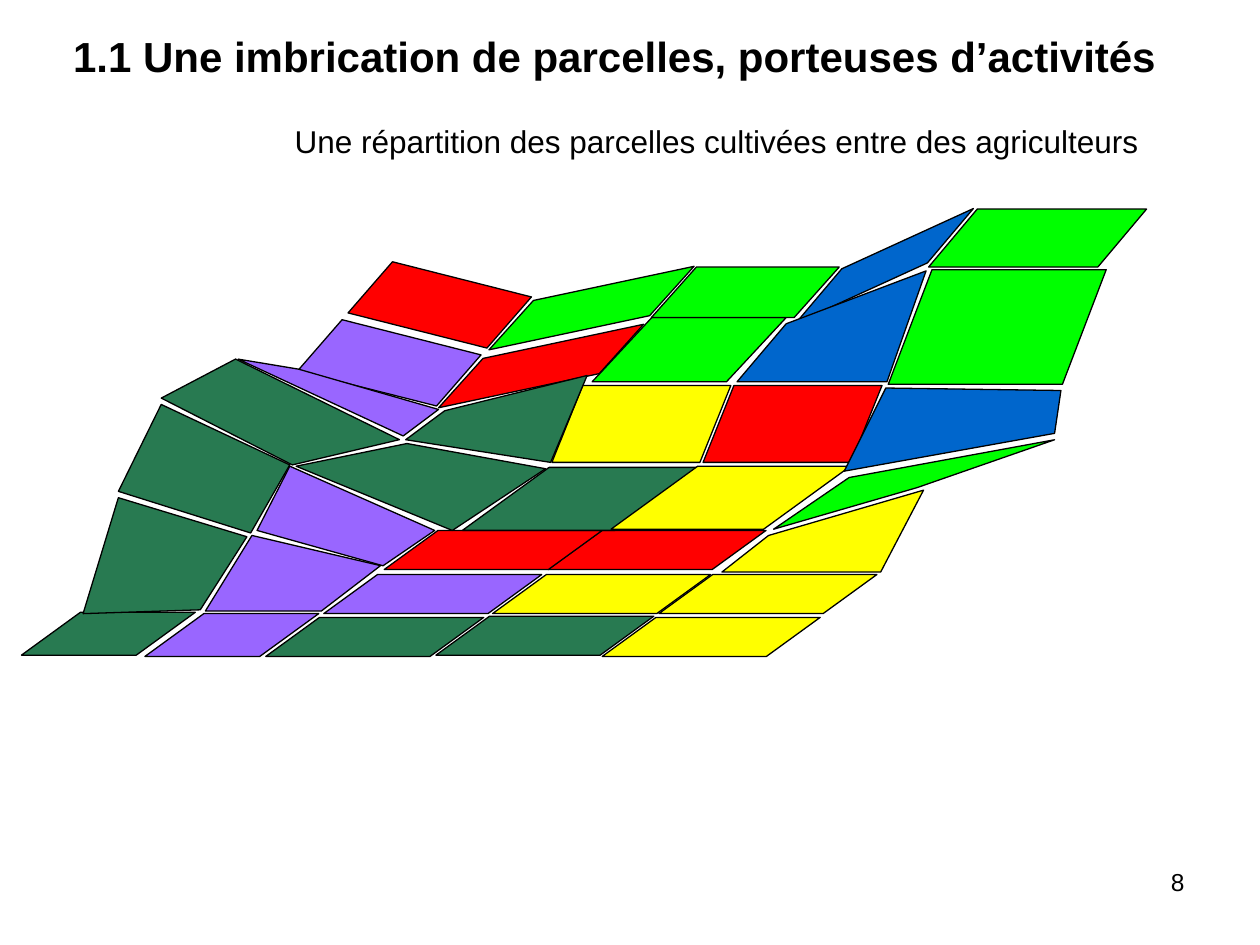
import pptx
import pptx.util
import pptx.dml.color
import pptx.enum.shapes
import pptx.enum.text

PX = 9144
COLORS = {
    "black": "000000",
    "lime": "00FF00",
    "yellow": "FFFF00",
    "red": "FF0000",
    "blue": "0066CC",
    "violet": "9966FF",
    "forest": "287A51",
}

STRIP = (173, 31, 1.377)
TILTED = (138, 48, 0.506)
WIDE = (190, 50, 1.377)
SQUARE = (142, 61, 0.402)
SMALL = (138, 34, 1.377)

PARALLELOGRAMS = [
    ("lime", 470, 252, (154, 51, 0.929), 0),
    ("yellow", 523, 456, STRIP, 0),
    ("forest", 211, 490, STRIP, 0),
    ("forest", 346, 489, STRIP, 0),
    ("yellow", 478, 490, STRIP, 0),
    ("lime", 517, 212, (149, 40, 0.892), 0),
    ("blue", 619, 199, (166, 24, 2.13), 155.4),
    ("lime", 737, 166, (173, 46, 0.84), 0),
    ("yellow", 438, 306, SQUARE, 0),
    ("red", 280, 218, TILTED, 14.2),
    ("lime", 383, 229, STRIP, 348),
    ("red", 343, 275, STRIP, 348),
    ("red", 435, 421, STRIP, 0),
    ("violet", 257, 456, STRIP, 0),
    ("red", 305, 421, STRIP, 0),
    ("yellow", 391, 456, STRIP, 0),
    ("lime", 705, 214, (173, 91, 0.382), 0),
    ("violet", 115, 487, SMALL, 0),
    ("violet", 240, 264, TILTED, 14.2),
    ("forest", 367, 371, WIDE, 0),
    ("yellow", 485, 370, WIDE, 0),
    ("red", 558, 306, SQUARE, 0),
    ("forest", 17, 486, SMALL, 0),
]

POLYGONS = [
    ("blue", [(624, 257), (585, 303), (704, 303), (735, 215)]),
    ("blue", [(703, 308), (670, 374), (837, 344), (842, 310)]),
    ("violet", [(237, 293), (189, 285), (320, 346), (348, 325)]),
    ("forest", [(466, 298), (437, 367), (322, 349), (353, 326)]),
    ("forest", [(66, 487), (94, 395), (196, 426), (159, 484)]),
    ("violet", [(302, 449), (200, 425), (163, 485), (255, 485)]),
    ("forest", [(94, 390), (128, 321), (230, 369), (199, 423)]),
    ("forest", [(128, 316), (187, 285), (317, 349), (232, 369)]),
    ("forest", [(235, 370), (323, 352), (433, 372), (359, 421)]),
    ("violet", [(230, 370), (204, 421), (304, 449), (345, 421)]),
    ("lime", [(614, 420), (674, 379), (837, 349), (728, 387)]),
    ("yellow", [(573, 454), (699, 454), (733, 389), (610, 425)]),
]


class SlideBuilder:
    font = "Arial"
    line_width = 0.75

    def __init__(self, slide):
        self.s = slide
        self.parcels = slide.shapes.add_group_shape().shapes

    def color(self, name):
        return pptx.dml.color.RGBColor.from_string(COLORS[name])

    def set_text(self, sp, text, size, bold=False, align=pptx.enum.text.PP_ALIGN.LEFT):
        tf = sp.text_frame
        tf.word_wrap = True
        tf.auto_size = pptx.enum.text.MSO_AUTO_SIZE.NONE
        tf.vertical_anchor = pptx.enum.text.MSO_ANCHOR.TOP
        p = tf.paragraphs[0]
        p.text = text
        p.alignment = align
        p.font.name = self.font
        p.font.size = pptx.util.Pt(size)
        p.font.bold = bold
        p.font.color.rgb = self.color("black")

    def title(self, text, x, y, w, h, size):
        sp = self.s.shapes.title
        sp.left, sp.top, sp.width, sp.height = (v * PX for v in (x, y, w, h))
        self.set_text(sp, text, size, bold=True)

    def text(self, text, x, y, w, h, size, align=pptx.enum.text.PP_ALIGN.LEFT):
        sp = self.s.shapes.add_textbox(*(v * PX for v in (x, y, w, h)))
        self.set_text(sp, text, size, align=align)

    def paint(self, sp, fill):
        sp.shadow.inherit = False
        sp.fill.solid()
        sp.fill.fore_color.rgb = self.color(fill)
        sp.line.color.rgb = self.color("black")
        sp.line.width = pptx.util.Pt(self.line_width)

    def parallelogram(self, fill, x, y, form, rotation):
        w, h, slant = form
        sp = self.parcels.add_shape(
            pptx.enum.shapes.MSO_SHAPE.PARALLELOGRAM, x * PX, y * PX, w * PX, h * PX)
        sp.adjustments[0] = slant
        sp.rotation = rotation
        self.paint(sp, fill)

    def polygon(self, fill, points):
        builder = self.parcels.build_freeform(*points[0], scale=PX)
        builder.add_line_segments(points[1:], close=True)
        self.paint(builder.convert_to_shape(), fill)


def main():
    prs = pptx.Presentation()
    prs.slide_width, prs.slide_height = 1000 * PX, 750 * PX
    b = SlideBuilder(prs.slides.add_slide(prs.slide_layouts[5]))
    b.title("1.1 Une imbrication de parcelles, porteuses d’activités", 48, 19, 924, 50, 24)
    b.text("Une répartition des parcelles cultivées entre des agriculteurs", 224, 92, 732, 40, 18)
    for parcel in PARALLELOGRAMS:
        b.parallelogram(*parcel)
    for parcel in POLYGONS:
        b.polygon(*parcel)
    b.text("8", 717, 683, 233, 52, 14, align=pptx.enum.text.PP_ALIGN.RIGHT)
    prs.save("out.pptx")


if __name__ == "__main__":
    main()
